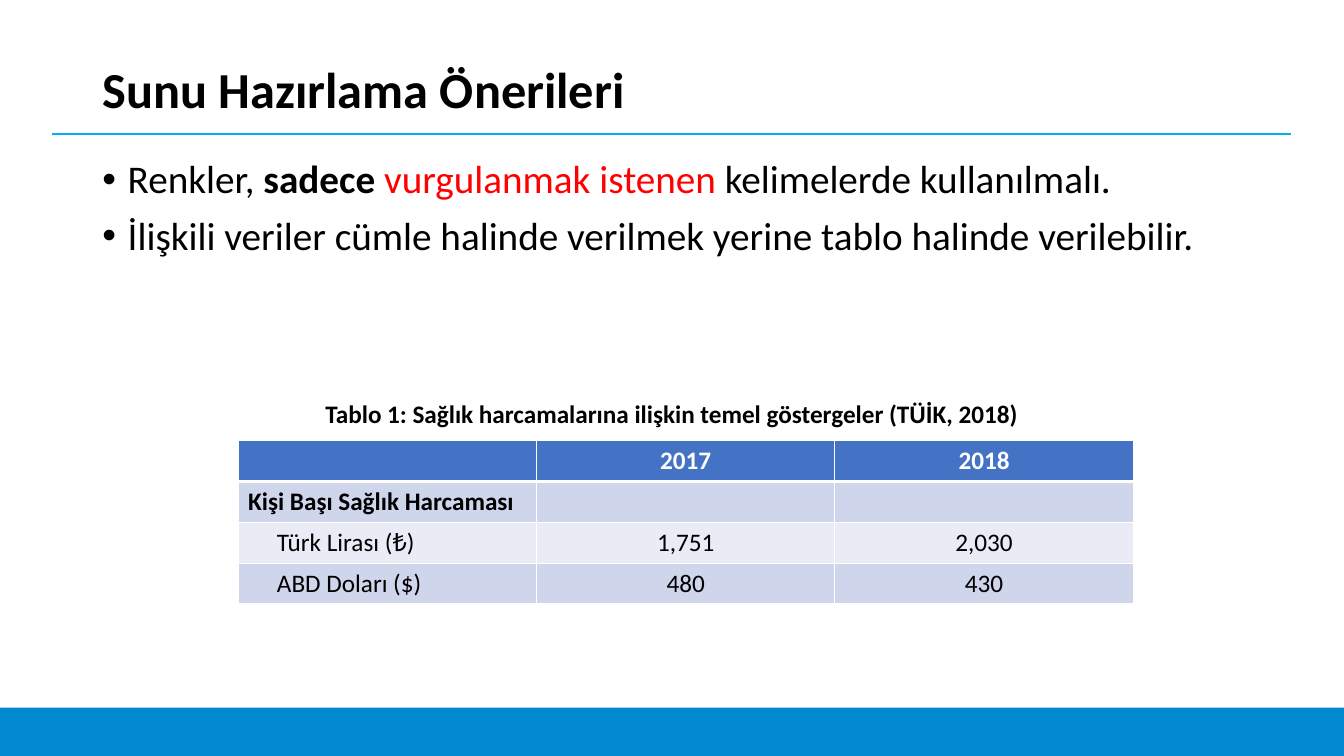
from dataclasses import dataclass

from lxml.etree import SubElement
from pptx import Presentation
from pptx.dml.color import RGBColor
from pptx.enum.shapes import MSO_CONNECTOR as Connector, MSO_SHAPE as Shape
from pptx.enum.text import MSO_ANCHOR as Anchor, MSO_AUTO_SIZE as AutoSize, PP_ALIGN as Align
from pptx.oxml.ns import qn
from pptx.util import Cm, Pt


@dataclass(frozen=True)
class Theme:
    font: str = "Calibri"
    text: str = "000000"
    accent: str = "FF0000"
    white: str = "FFFFFF"
    band: str = "0089CF"
    rule: str = "00B0F0"
    header: str = "4472C4"
    stripes: tuple = ("E9EBF5", "CFD5EA")
    title_size: int = 36
    body_size: int = 28
    table_size: int = 18


THEME = Theme()

BULLETS = [
    [
        ("Renkler, ", {}),
        ("sadece ", {"bold": True}),
        ("vurgulanmak istenen", {"color": THEME.accent}),
        (" kelimelerde kullanılmalı.", {}),
    ],
    [("İlişkili veriler cümle halinde verilmek yerine tablo halinde verilebilir.", {})],
]

INDICATORS = [
    ["", "2017", "2018"],
    ["Kişi Başı Sağlık Harcaması", "", ""],
    ["Türk Lirası (₺)", "1,751", "2,030"],
    ["ABD Doları ($)", "480", "430"],
]


def add_span(para, text, size=THEME.table_size, color=THEME.text, bold=False):
    span = para.add_run()
    span.text = text
    span.font.name = THEME.font
    span.font.size = Pt(size)
    span.font.bold = bold
    span.font.color.rgb = RGBColor.from_string(color)


def add_band(slide, left, top, width, height):
    band = slide.shapes.add_shape(Shape.RECTANGLE, left, top, width, height)
    band.shadow.inherit = False
    band.fill.solid()
    band.fill.fore_color.rgb = RGBColor.from_string(THEME.band)
    band.line.fill.background()


def add_rule(slide, left, right, top):
    rule = slide.shapes.add_connector(Connector.STRAIGHT, left, top, right, top)
    rule.line.color.rgb = RGBColor.from_string(THEME.rule)
    rule.line.width = Pt(1.5)
    SubElement(rule._element.spPr, qn("a:effectLst"))


def set_title(slide, text, left, top, width, height):
    title = slide.shapes.title
    title.left, title.top, title.width, title.height = left, top, width, height
    frame = title.text_frame
    frame.auto_size = AutoSize.NONE
    frame.vertical_anchor = Anchor.MIDDLE
    para = frame.paragraphs[0]
    para.alignment = Align.LEFT
    para.line_spacing = 0.9
    add_span(para, text, size=THEME.title_size, bold=True)


def add_text_box(slide, left, top, width, height):
    frame = slide.shapes.add_textbox(left, top, width, height).text_frame
    frame.word_wrap = True
    return frame


def add_bullets(frame, bullets):
    for index, spans in enumerate(bullets):
        para = frame.add_paragraph() if index else frame.paragraphs[0]
        para.line_spacing = 0.9
        if index:
            para.space_before = Pt(10)
        properties = para._p.get_or_add_pPr()
        properties.set("marL", str(Cm(0.64)))
        properties.set("indent", str(-Cm(0.64)))
        SubElement(properties, qn("a:buFont"), typeface="Arial")
        SubElement(properties, qn("a:buChar"), char="•")
        for text, style in spans:
            add_span(para, text, size=THEME.body_size, **style)


def set_borders(cell, **widths):
    properties = cell._tc.get_or_add_tcPr()
    for side in "LRTB":
        line = SubElement(properties, qn(f"a:ln{side}"), w=str(Pt(widths.get(side, 1))))
        fill = SubElement(line, qn("a:solidFill"))
        SubElement(fill, qn("a:srgbClr"), val=THEME.white)


def add_indicator_table(slide, rows, left, top, column_width, row_height):
    columns = len(rows[0])
    table = slide.shapes.add_table(
        len(rows), columns, left, top, column_width * columns, row_height * len(rows)
    ).table
    for column in table.columns:
        column.width = column_width
    for row_index, row in enumerate(rows):
        table.rows[row_index].height = row_height
        is_header = row_index == 0
        is_group = not any(row[1:])
        fill = THEME.header if is_header else THEME.stripes[row_index % 2]
        for column_index, text in enumerate(row):
            cell = table.cell(row_index, column_index)
            set_borders(cell, B=3 if is_header else 1, T=3 if row_index == 1 else 1)
            cell.fill.solid()
            cell.fill.fore_color.rgb = RGBColor.from_string(fill)
            para = cell.text_frame.paragraphs[0]
            para.font.size = Pt(THEME.table_size)
            if column_index:
                para.alignment = Align.CENTER
            elif not is_header and not is_group:
                cell.margin_left = Cm(0.98)
            if text:
                color = THEME.white if is_header else THEME.text
                add_span(para, text, color=color, bold=is_header or is_group)


def main():
    deck = Presentation()
    deck.slide_width, deck.slide_height = Cm(33.87), Cm(19.05)
    slide = deck.slides.add_slide(deck.slide_layouts[5])

    add_band(slide, Cm(0), Cm(17.83), deck.slide_width, Cm(1.22))
    add_rule(slide, Cm(1.32), Cm(32.54), Cm(3.38))
    set_title(slide, "Sunu Hazırlama Önerileri", Cm(2.33), Cm(1.02), Cm(29.21), Cm(2.59))
    add_bullets(add_text_box(slide, Cm(2.33), Cm(3.91), Cm(29.21), Cm(13.23)), BULLETS)
    add_indicator_table(slide, INDICATORS, Cm(6), Cm(11.1), Cm(7.52), Cm(1.03))
    caption = add_text_box(slide, Cm(7.95), Cm(9.91), Cm(18.62), Cm(1.02))
    add_span(
        caption.paragraphs[0],
        "Tablo 1: Sağlık harcamalarına ilişkin temel göstergeler (TÜİK, 2018)",
        bold=True,
    )

    deck.save("out.pptx")


if __name__ == "__main__":
    main()
